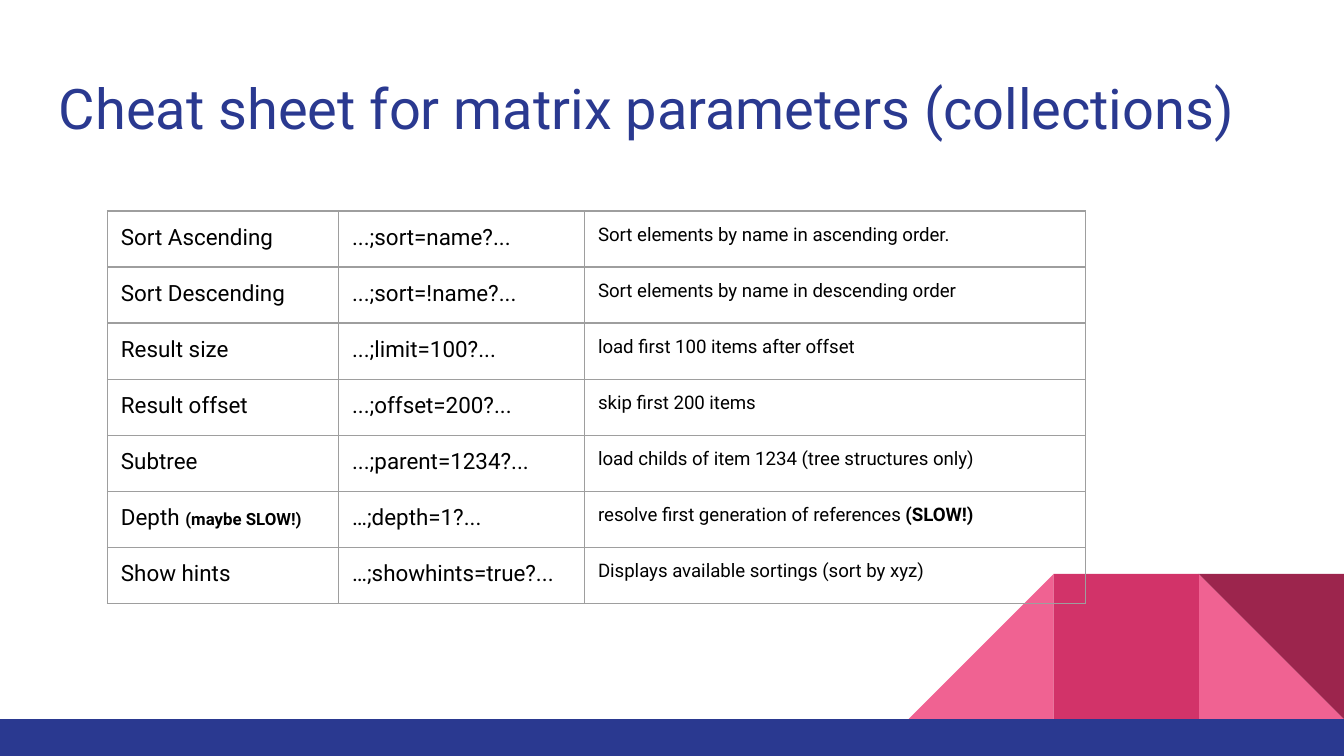
"""Build the cheat sheet slide for matrix parameters of collections."""
import pptx
import pptx.dml.color
import pptx.enum.shapes
import pptx.oxml
import pptx.oxml.ns
import pptx.util

Inches = pptx.util.Inches
Pt = pptx.util.Pt
RGBColor = pptx.dml.color.RGBColor
MSO_SHAPE = pptx.enum.shapes.MSO_SHAPE

NAVY = RGBColor(0x2A, 0x39, 0x90)
PINK = RGBColor(0xF0, 0x62, 0x92)
ROSE = RGBColor(0xD2, 0x33, 0x69)
WINE = RGBColor(0x9C, 0x25, 0x4D)
GREY = RGBColor(0x9E, 0x9E, 0x9E)
BLACK = RGBColor(0, 0, 0)

FONT = "Roboto"
INSET = Inches(0.1)
TILE = 1.08
BAR_TOP = 5.35
COL_WIDTHS = (1.72, 1.83, 3.73)
COL_SIZES = (12, 12, 10)
ROW_HEIGHT = 0.417

ROWS = (
    ("Sort Ascending", "...;sort=name?...", "Sort elements by name in ascending order."),
    ("Sort Descending", "...;sort=!name?...", "Sort elements by name in descending order"),
    ("Result size", "...;limit=100?...", "load first 100 items after offset"),
    ("Result offset", "...;offset=200?...", "skip first 200 items"),
    ("Subtree", "...;parent=1234?...", "load childs of item 1234 (tree structures only)"),
    ("Depth ", "…;depth=1?...", "resolve first generation of references "),
    ("Show hints", "…;showhints=true?...", "Displays available sortings (sort by xyz)"),
)
WARNINGS = {(5, 0): ("(maybe SLOW!)", 9), (5, 2): ("(SLOW!)", 10)}


def add_run(p, text, size=12, color=BLACK, bold=False):
    r = p.add_run()
    r.text = text
    r.font.name = FONT
    r.font.size = Pt(size)
    r.font.bold = bold
    r.font.color.rgb = color


def add_block(s, kind, left, top, width, height, color, rotation=0):
    sp = s.shapes.add_shape(kind, Inches(left), Inches(top), Inches(width), Inches(height))
    sp.shadow.inherit = False
    sp.fill.solid()
    sp.fill.fore_color.rgb = color
    sp.line.fill.background()
    sp.rotation = rotation


def add_decoration(s):
    tiles = (
        (MSO_SHAPE.RIGHT_TRIANGLE, 2, PINK, 0),
        (MSO_SHAPE.RIGHT_TRIANGLE, 0, PINK, 270),
        (MSO_SHAPE.RECTANGLE, 1, ROSE, 0),
        (MSO_SHAPE.RIGHT_TRIANGLE, 2, WINE, 180),
    )
    for kind, col, color, rotation in tiles:
        left = 10 - (3 - col) * TILE
        add_block(s, kind, left, BAR_TOP - TILE, TILE, TILE, color, rotation)
    add_block(s, MSO_SHAPE.RECTANGLE, 0, BAR_TOP, 10, 0.28, NAVY)


def add_title(s, text):
    sp = s.shapes.add_textbox(Inches(0.34), Inches(0.45), Inches(9.32), Inches(0.66))
    tf = sp.text_frame
    tf.word_wrap = True
    tf.margin_left = tf.margin_right = tf.margin_top = tf.margin_bottom = INSET
    add_run(tf.paragraphs[0], text, size=30, color=NAVY)


def add_borders(cell, color, width):
    tc_pr = cell._tc.get_or_add_tcPr()
    for side in ("lnL", "lnR", "lnT", "lnB"):
        tc_pr.append(pptx.oxml.parse_xml(
            f'<a:{side} {pptx.oxml.ns.nsdecls("a")} w="{Pt(width)}">'
            f'<a:solidFill><a:srgbClr val="{color}"/></a:solidFill></a:{side}>'))


def add_parameter_table(s):
    frame = s.shapes.add_table(
        len(ROWS), len(COL_WIDTHS), Inches(0.8), Inches(1.57),
        Inches(sum(COL_WIDTHS)), Inches(ROW_HEIGHT * len(ROWS)))
    table = frame.table
    table.first_row = table.horz_banding = False
    for column, width in zip(table.columns, COL_WIDTHS):
        column.width = Inches(width)
    for i, row in enumerate(ROWS):
        table.rows[i].height = Inches(ROW_HEIGHT)
        for j, text in enumerate(row):
            cell = table.cell(i, j)
            cell.margin_left = cell.margin_right = INSET
            cell.margin_top = cell.margin_bottom = INSET
            add_borders(cell, GREY, 0.75)
            cell.fill.background()
            p = cell.text_frame.paragraphs[0]
            add_run(p, text, size=COL_SIZES[j])
            if (i, j) in WARNINGS:
                warning, size = WARNINGS[i, j]
                add_run(p, warning, size=size, bold=True)


def main():
    prs = pptx.Presentation()
    prs.slide_width = Inches(10)
    prs.slide_height = Inches(5.625)
    s = prs.slides.add_slide(prs.slide_layouts[6])
    add_decoration(s)
    add_title(s, "Cheat sheet for matrix parameters (collections)")
    add_parameter_table(s)
    prs.save("out.pptx")


if __name__ == "__main__":
    main()
